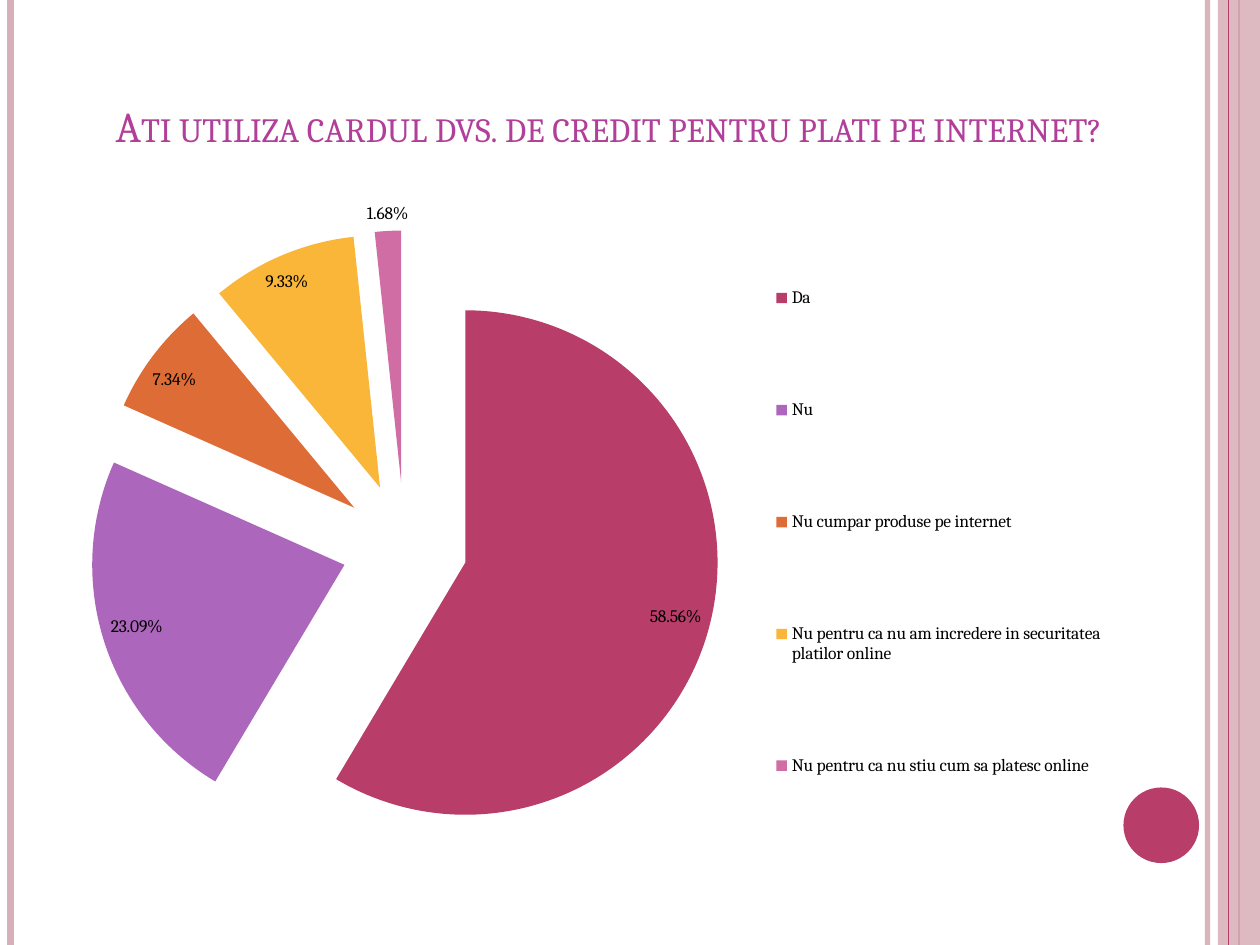
from lxml import etree
from pptx import Presentation
from pptx.chart.data import CategoryChartData
from pptx.dml.color import RGBColor
from pptx.enum import chart as charts, shapes, text
from pptx.oxml import parse_xml
from pptx.oxml.ns import qn
from pptx.util import Pt

FONT = "Cambria"
ROSE, PALE = "B83D68", "D8AFB9"
ANSWERS = [
    ("Da", 0.5856, ROSE),
    ("Nu", 0.2309, "AC66BB"),
    ("Nu cumpar produse pe internet", 0.0734, "DE6C36"),
    ("Nu pentru ca nu am incredere in securitatea platilor online", 0.0933, "F9B639"),
    ("Nu pentru ca nu stiu cum sa platesc online", 0.0168, "CF6DA4"),
]


def paint(target, color, opacity=100):
    """Give a fill a solid colour and, if asked, an opacity in percent."""
    target.solid()
    target.fore_color.rgb = RGBColor.from_string(color)
    if opacity < 100:
        node = target._xPr.find(".//" + qn("a:srgbClr"))
        etree.SubElement(node, qn("a:alpha"), val=str(opacity * 1000))


def apply_format(target, values):
    """Set each named attribute of an object."""
    for name, value in values.items():
        setattr(target, name, value)


def add_rule(slide, x, height, color, width, opacity=100):
    """Draw a full-height vertical line."""
    line = slide.shapes.add_connector(
        shapes.MSO_CONNECTOR.STRAIGHT, Pt(x), Pt(0), Pt(x), Pt(height))
    line.line.width = Pt(width)
    paint(line.line.fill, color, opacity)
    etree.SubElement(line._element.spPr, qn("a:effectLst"))


def add_solid(slide, kind, box, color, opacity=100):
    """Draw a filled shape without outline."""
    shape = slide.shapes.add_shape(kind, *map(Pt, box))
    shape.shadow.inherit = False
    shape.line.fill.background()
    paint(shape.fill, color, opacity)


def add_frame(slide, width, height):
    """Draw the edge lines, side band and disc."""
    add_rule(slide, width - 30, height, PALE, 3, 93)
    add_rule(slide, 6, height, PALE, 4.5)
    add_rule(slide, width - 12, height, ROSE, 1.5)
    add_solid(slide, shapes.MSO_SHAPE.RECTANGLE, (width - 24, 0, 24, height), PALE, 87)
    add_rule(slide, width - 18, height, ROSE, 0.75)
    add_solid(slide, shapes.MSO_SHAPE.OVAL, (width - 78, height - 90, 43.2, 43.2), ROSE)


def add_title(slide, box, wording):
    """Place and format the title placeholder."""
    title = slide.shapes.title
    apply_format(title, dict(zip(("left", "top", "width", "height"), map(Pt, box))))
    frame = title.text_frame
    frame.text = wording
    apply_format(frame, {"word_wrap": True, "auto_size": text.MSO_AUTO_SIZE.NONE,
                         "vertical_anchor": text.MSO_ANCHOR.BOTTOM})
    paragraph = frame.paragraphs[0]
    paragraph.alignment = text.PP_ALIGN.CENTER
    font = paragraph.runs[0].font
    apply_format(font, {"name": FONT, "size": Pt(24.3)})
    paint(font.fill, "B13F9A")
    font._element.set("cap", "small")


def set_layout(element, box):
    """Fix a chart part at the given fractions of the chart."""
    for previous in element.findall(qn("c:layout")):
        element.remove(previous)
    parts = "".join(f'<c:{name} val="{value}"/>' for name, value in zip("xywh", box))
    layout = parse_xml(
        '<c:layout xmlns:c="http://schemas.openxmlformats.org/drawingml/2006/chart">'
        '<c:manualLayout><c:xMode val="edge"/><c:yMode val="edge"/>'
        f'{parts}</c:manualLayout></c:layout>')
    position = 1 if element.tag == qn("c:legend") else 0
    element.insert(position, layout)


def add_pie(slide, box, answers):
    """Place the exploded pie with its labels and legend."""
    data = CategoryChartData(number_format="0.00%")
    data.categories = [name for name, _, _ in answers]
    data.add_series("Series 1", [value for _, value, _ in answers])
    chart = slide.shapes.add_chart(
        charts.XL_CHART_TYPE.PIE_EXPLODED, *map(Pt, box), data).chart
    apply_format(chart, {"has_title": False, "has_legend": True})
    apply_format(chart.font, {"name": FONT, "size": Pt(10)})
    paint(chart.font.fill, "000000")
    apply_format(chart.legend, {"position": charts.XL_LEGEND_POSITION.RIGHT,
                                "include_in_layout": False})
    set_layout(chart.legend._element, (0.69, 0.01, 0.3, 0.97))
    plot = chart.plots[0]
    set_layout(chart._chartSpace.chart.plotArea, (0.05, 0.06, 0.59, 0.91))
    plot.vary_by_categories = True
    plot.has_data_labels = True
    apply_format(plot.data_labels, {
        "show_value": True, "show_percentage": False, "number_format": "0.00%",
        "number_format_is_linked": False,
        "position": charts.XL_LABEL_POSITION.BEST_FIT})
    series = plot.series[0]
    for explosion in series._element.findall(qn("c:explosion")):
        explosion.set("val", "25")
    for index, (_, _, color) in enumerate(answers):
        paint(series.points[index].format.fill, color)


def main():
    """Build and save the presentation."""
    presentation = Presentation()
    width, height = 720, 540
    apply_format(presentation, {"slide_width": Pt(width), "slide_height": Pt(height)})
    slide = presentation.slides.add_slide(presentation.slide_layouts[5])
    add_frame(slide, width, height)
    add_title(slide, (12, 21.6, 672, 68.4),
              "Ati utiliza cardul dvs. de credit pentru plati pe internet?")
    add_pie(slide, (18, 108, 618, 396), ANSWERS)
    presentation.save("out.pptx")


if __name__ == "__main__":
    main()
